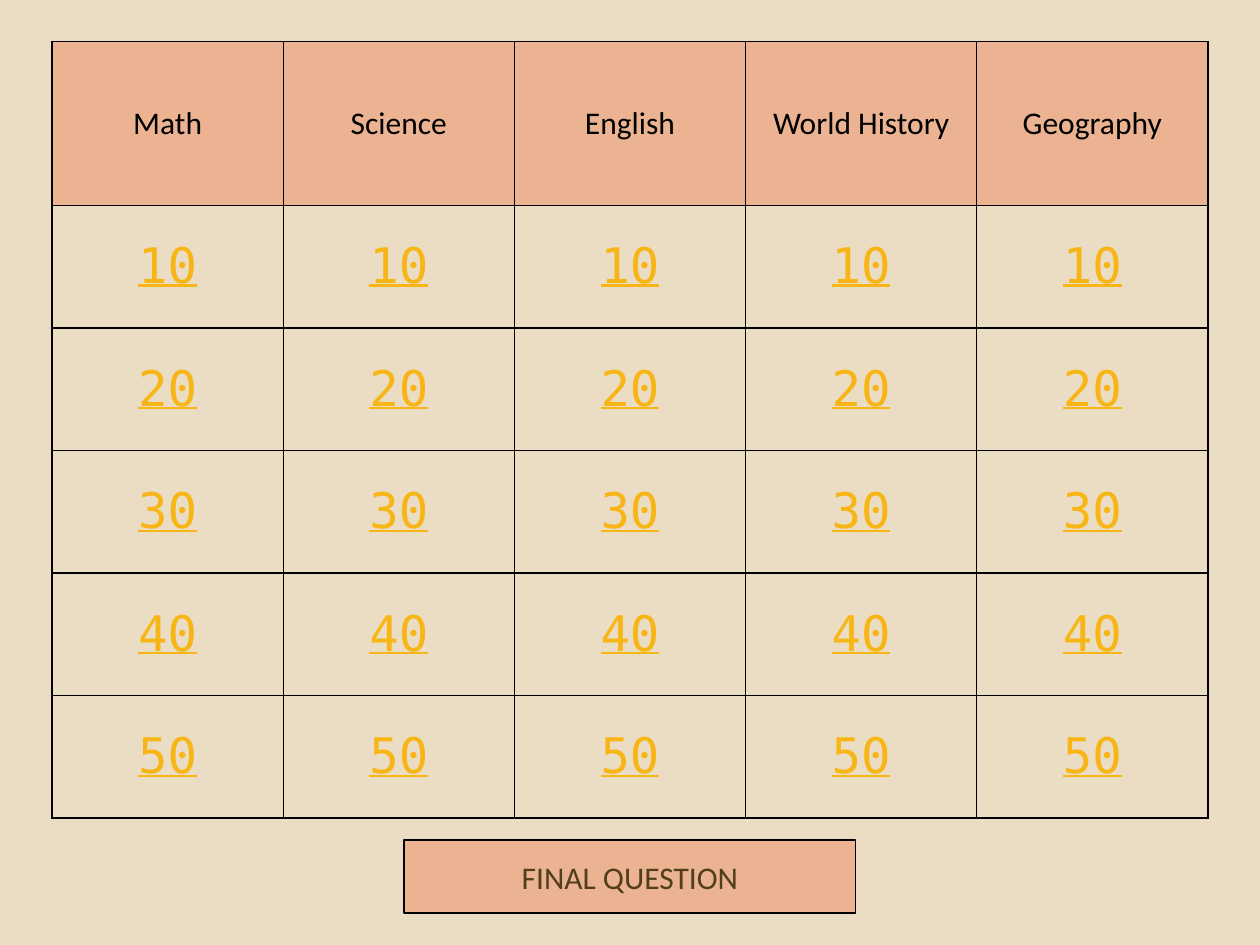
from lxml.etree import SubElement
from pptx import Presentation
from pptx.dml.color import RGBColor
from pptx.enum.shapes import MSO_SHAPE
from pptx.enum.text import MSO_ANCHOR, PP_ALIGN
from pptx.oxml.ns import qn
from pptx.util import Cm, Pt

WIDE, HIGH = 25.4, 19.05
TOPICS = ["Math", "Science", "English", "World History", "Geography"]
POINTS = range(10, 51, 10)


def color(code):
    return RGBColor.from_string(code)


def paint(fill, code):
    fill.solid()
    fill.fore_color.rgb = color(code)


class Board:
    sand, peach, black, gold, brown = "EBDDC3", "EBB391", "000000", "F7B615", "513E1B"
    font, mono = "Calibri", "DejaVu Sans Mono"

    def __init__(self, slide):
        self.slide = slide
        paint(slide.background.fill, self.sand)

    def label(self, frame, text, code, size=18, font=font, under=False):
        frame.text = text
        para = frame.paragraphs[0]
        para.alignment = PP_ALIGN.CENTER
        style = para.runs[0].font
        style.name, style.size, style.underline = font, Pt(size), under
        style.color.rgb = color(code)

    def border(self, cell):
        """Draw a thin line on all four sides; lines must precede the fill."""
        props = cell._tc.get_or_add_tcPr()
        for spot, side in enumerate("LRTB"):
            line = SubElement(props, qn(f"a:ln{side}"), w=str(Pt(1)))
            fill = SubElement(line, qn("a:solidFill"))
            SubElement(fill, qn("a:srgbClr"), val=self.black)
            props.insert(spot, line)

    def cell(self, cell, text, head):
        cell.vertical_anchor = MSO_ANCHOR.MIDDLE
        if head:
            paint(cell.fill, self.peach)
            self.label(cell.text_frame, text, self.black)
        else:
            cell.fill.background()
            self.label(cell.text_frame, text, self.gold, 28, self.mono, True)
        self.border(cell)

    def table(self, rows, left, top, width, heights):
        count = len(rows[0])
        grid = self.slide.shapes.add_table(
            len(rows), count, Cm(left), Cm(top), Cm(width * count), Cm(sum(heights))
        ).table
        grid.first_row = grid.horz_banding = False
        for col in grid.columns:
            col.width = Cm(width)
        for r, (row, height) in enumerate(zip(rows, heights)):
            grid.rows[r].height = Cm(height)
            for c, text in enumerate(row):
                self.cell(grid.cell(r, c), text, head=r == 0)

    def box(self, text, left, top, width, height):
        shape = self.slide.shapes.add_shape(
            MSO_SHAPE.RECTANGLE, Cm(left), Cm(top), Cm(width), Cm(height)
        )
        shape.shadow.inherit = False
        paint(shape.fill, self.peach)
        paint(shape.line.fill, self.black)
        shape.line.width = Pt(1)
        shape.text_frame.vertical_anchor = MSO_ANCHOR.MIDDLE
        self.label(shape.text_frame, text, self.brown)


def main():
    deck = Presentation()
    deck.slide_width, deck.slide_height = Cm(WIDE), Cm(HIGH)
    board = Board(deck.slides.add_slide(deck.slide_layouts[6]))

    rows = [TOPICS] + [[str(value)] * len(TOPICS) for value in POINTS]
    col = 4.66
    left = (WIDE - col * len(TOPICS)) / 2
    board.table(rows, left, 0.84, col, [3.3] + [2.47] * len(POINTS))

    width = 9.1
    board.box("FINAL QUESTION", (WIDE - width) / 2, 16.93, width, 1.48)
    deck.save("out.pptx")


if __name__ == "__main__":
    main()
